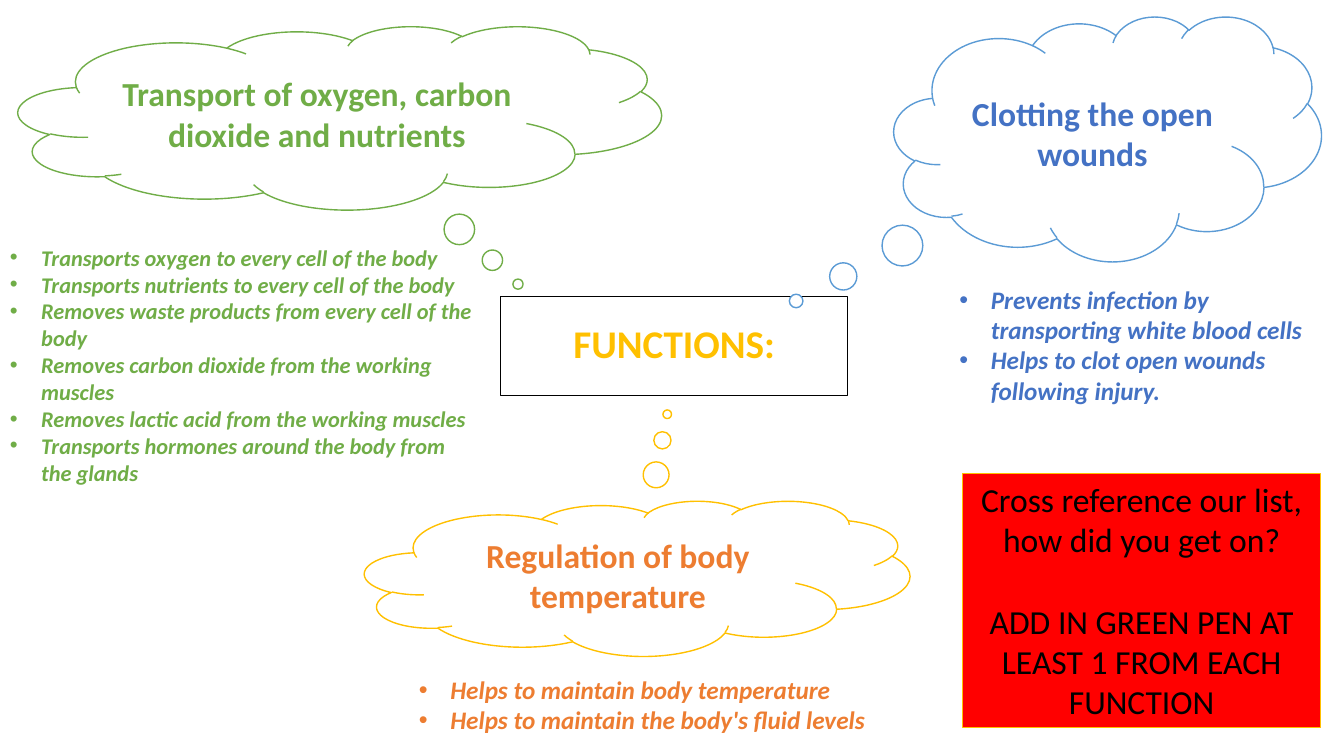
from lxml import etree
from pptx import Presentation
from pptx.dml.color import RGBColor
from pptx.enum.shapes import MSO_SHAPE
from pptx.enum.text import MSO_ANCHOR, PP_ALIGN
from pptx.oxml.ns import qn
from pptx.util import Cm, Pt

CENTER = PP_ALIGN.CENTER
LEFT = PP_ALIGN.LEFT
MIDDLE = MSO_ANCHOR.MIDDLE
CLOUD = MSO_SHAPE.CLOUD_CALLOUT
RECTANGLE = MSO_SHAPE.RECTANGLE
TITLE_ONLY = 5

FONT = "Calibri"
COLORS = {
    "white": "FFFFFF", "black": "000000", "red": "FF0000", "gold": "FFC000",
    "green": "70AD47", "sky": "5B9BD5", "blue": "4472C4", "orange": "ED7D31",
}

TITLE = ("FUNCTIONS:", (12.62, 7.47, 8.74, 2.49))
CLOUDS = [
    ("Transport of oxygen, carbon dioxide and nutrients",
     (0.46, 0.66, 16.21, 4.62), (0.277, 0.907), "green", "green"),
    ("Clotting the open wounds",
     (22.53, 0.41, 10.77, 6.17), (-0.729, 0.663), "sky", "blue"),
    ("Regulation of body temperature",
     (9.19, 12.62, 13.74, 3.91), (0.055, -1.058), "gold", "orange"),
]
LISTS = [
    (["Transports oxygen to every cell of the body",
      "Transports nutrients to every cell of the body",
      "Removes waste products from every cell of the body",
      "Removes carbon dioxide from the working muscles",
      "Removes lactic acid from the working muscles",
      "Transports hormones around the body from the glands"],
     (0, 6.02, 12.19, 6.4), 16, "green"),
    (["Prevents infection by transporting white blood cells",
      "Helps to clot open wounds following injury."],
     (23.93, 7.04, 9.35, 3.33), 18, "blue"),
    (["Helps to maintain body temperature",
      "Helps to maintain the body's fluid levels"],
     (10.31, 16.87, 21.21, 1.8), 18, "orange"),
]
TASK = (["Cross reference our list, how did you get on?",
         "ADD IN GREEN PEN AT LEAST 1 FROM EACH FUNCTION"],
        (24.26, 11.94, 9.02, 6.4))
TASK_GAP = 29.3
BULLET_INDENT = Cm(0.79)


def rgb(name):
    return RGBColor.from_string(COLORS[name])


def lengths(place):
    return [Cm(value) for value in place]


def outline(shape, color, width):
    shape.line.color.rgb = rgb(color)
    shape.line.width = Pt(width)


def write(shape, lines, size, color, align=CENTER, bold=False, italic=False):
    frame = shape.text_frame
    frame.word_wrap = True
    frame.text = "\n".join(lines)
    for para in frame.paragraphs:
        para.alignment = align
        for span in para.runs:
            font = span.font
            font.name, font.size = FONT, Pt(size)
            font.bold, font.italic = bold, italic
            font.color.rgb = rgb(color)
    return frame


def add_panel(page, kind, place, fill, line, width):
    panel = page.shapes.add_shape(kind, *lengths(place))
    panel.shadow.inherit = False
    panel.fill.solid()
    panel.fill.fore_color.rgb = rgb(fill)
    outline(panel, line, width)
    return panel


def add_bullet(para):
    properties = para._p.get_or_add_pPr()
    properties.set("marL", str(BULLET_INDENT))
    properties.set("indent", str(-BULLET_INDENT))
    etree.SubElement(properties, qn("a:buFont")).set("typeface", "Arial")
    etree.SubElement(properties, qn("a:buChar")).set("char", "•")


def add_title(page):
    text, place = TITLE
    title = page.shapes.title
    title.left, title.top, title.width, title.height = lengths(place)
    outline(title, "black", 0.75)
    frame = write(title, [text], 28, "gold", bold=True)
    frame.vertical_anchor = MIDDLE
    frame.paragraphs[0].line_spacing = 0.9


def add_cloud(page, text, place, pointer, line, color):
    cloud = add_panel(page, CLOUD, place, "white", line, 1)
    for index, value in enumerate(pointer):
        cloud.adjustments[index] = value
    write(cloud, [text], 24, color, bold=True).vertical_anchor = MIDDLE


def add_list(page, lines, place, size, color):
    box = page.shapes.add_textbox(*lengths(place))
    frame = write(box, lines, size, color, LEFT, bold=True, italic=True)
    for para in frame.paragraphs:
        add_bullet(para)


def add_task(page):
    lines, place = TASK
    panel = add_panel(page, RECTANGLE, place, "red", "gold", 0.75)
    frame = write(panel, lines, 24, "black")
    frame.vertical_anchor = MSO_ANCHOR.TOP
    frame.paragraphs[1].space_before = Pt(TASK_GAP)


def main():
    deck = Presentation()
    deck.slide_width, deck.slide_height = Cm(33.87), Cm(19.05)
    page = deck.slides.add_slide(deck.slide_layouts[TITLE_ONLY])
    add_title(page)
    for cloud in CLOUDS:
        add_cloud(page, *cloud)
    for bullets in LISTS:
        add_list(page, *bullets)
    add_task(page)
    deck.save("out.pptx")


if __name__ == "__main__":
    main()
